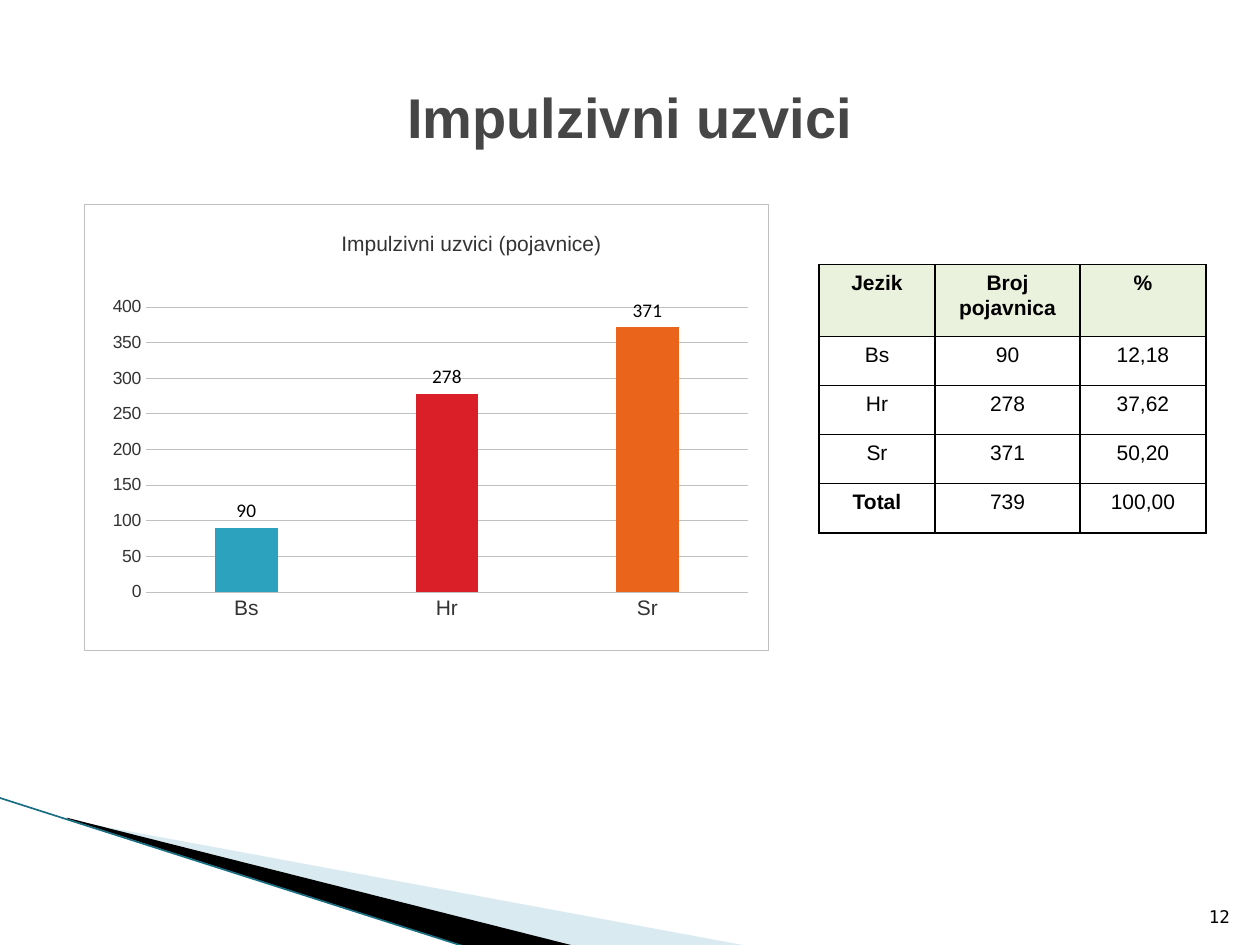
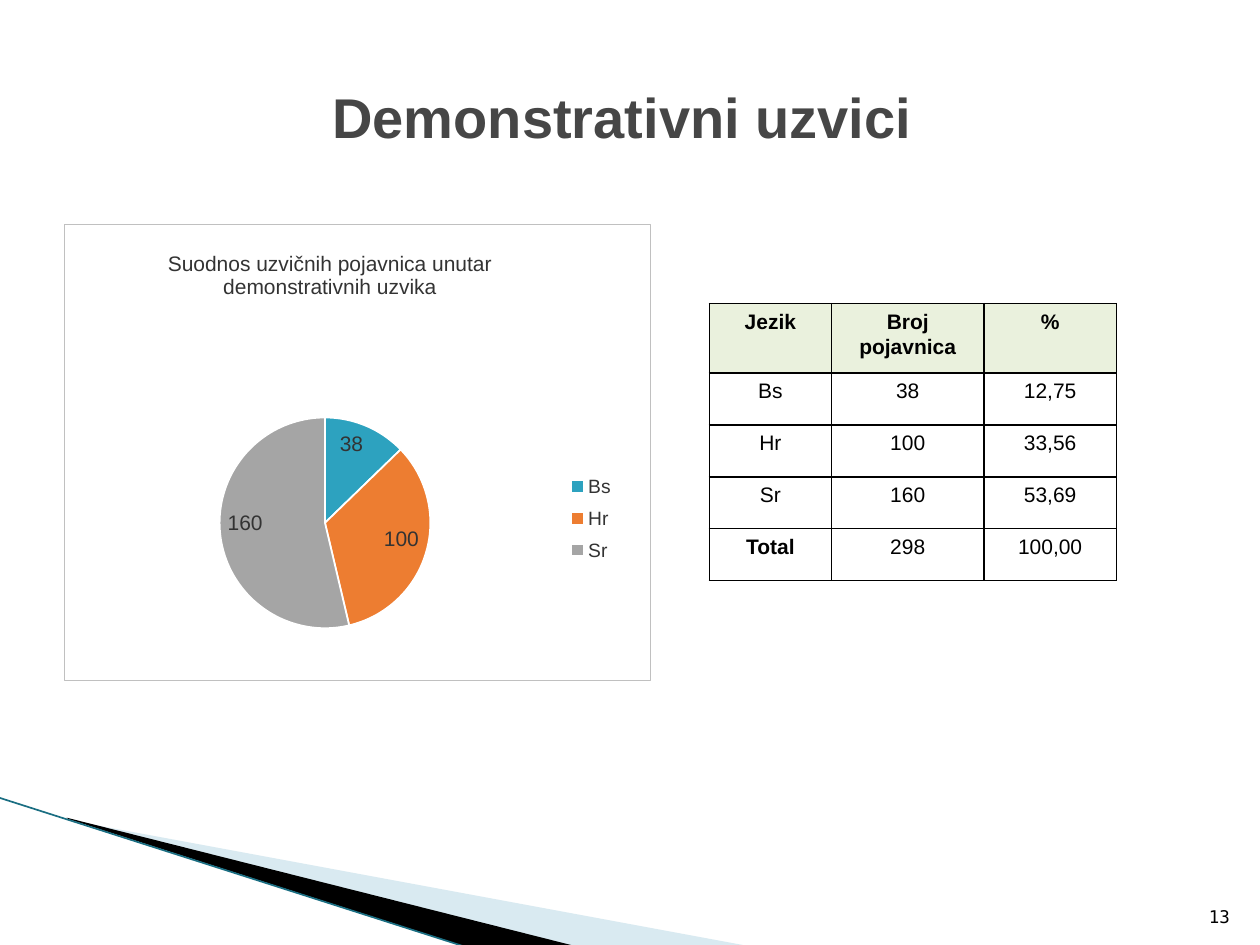
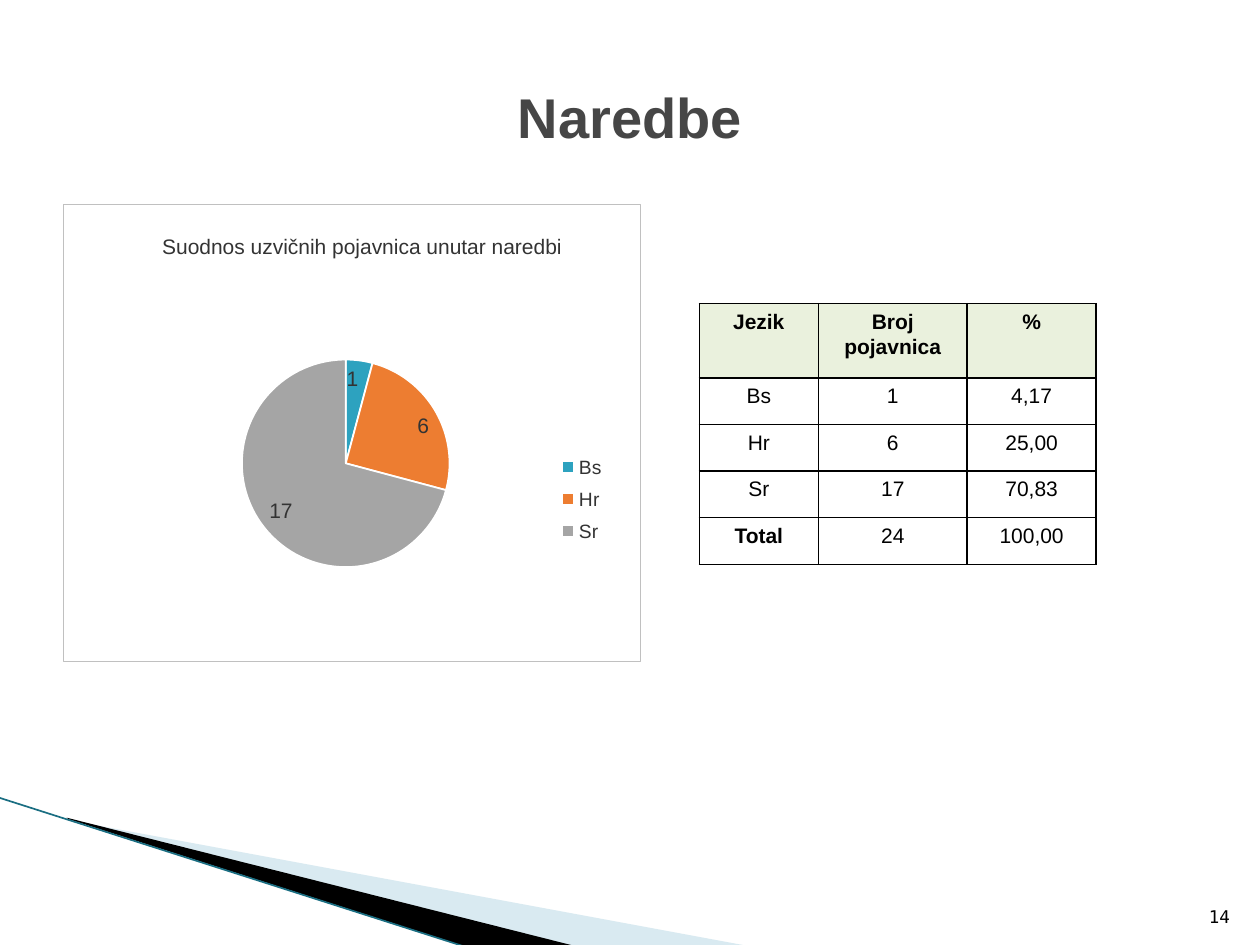
from dataclasses import dataclass
from typing import NamedTuple

from lxml.etree import SubElement
from pptx import Presentation
from pptx.chart.chart import Chart
from pptx.chart.data import CategoryChartData
from pptx.dml.color import RGBColor
from pptx.enum.chart import (
    XL_CHART_TYPE, XL_LABEL_POSITION, XL_LEGEND_POSITION, XL_TICK_MARK)
from pptx.enum.shapes import MSO_CONNECTOR
from pptx.enum.text import MSO_ANCHOR, PP_ALIGN
from pptx.oxml import parse_xml
from pptx.oxml.ns import nsdecls, qn
from pptx.util import Inches, Pt

COLORS = {
    "title": "464646", "text": "000000", "label": "333333", "rule": "C0C0C0",
    "paper": "FFFFFF", "head": "EAF1DD", "mist": "A0CBDC", "black": "000000",
    "edge": "1A6E82", "teal": "2DA2BF", "red": "DA1F28", "flame": "EB641B",
    "orange": "ED7D31", "gray": "A5A5A5",
}
FONT = "Arial"
LANGS = ("Bs", "Hr", "Sr")
HEADS = ("Jezik", "Broj pojavnica", "%")
SHARES = (0.3, 0.375, 0.325)
BAR_HUES = ("teal", "red", "flame")
PIE_HUES = ("teal", "orange", "gray")
FIRST_PAGE = 12


class Box(NamedTuple):
    x: float
    y: float
    w: float
    h: float

    def inches(self) -> tuple:
        return tuple(Inches(side) for side in self)


class Band(NamedTuple):
    points: tuple
    color: str
    alpha: int


@dataclass
class Topic:
    title: str
    caption: str
    counts: tuple
    is_pie: bool
    chart: Box
    plot: Box
    start: tuple
    table: Box
    head: float


BANDS = (
    Band(((0.55, 6.51), (5.95, 7.51), (4.56, 7.51), (0.55, 6.5)), "mist", 40),
    Band(((0.53, 6.49), (4.57, 7.51), (3.72, 7.52), (0.54, 6.5)), "black", 100),
)
LEGEND = Box(0.85, 0.53, 0.1, 0.23)
TOPICS = (
    Topic("Impulzivni uzvici", "Impulzivni uzvici (pojavnice)",
          (90, 278, 371), False,
          Box(0.67, 1.62, 5.43, 3.54), Box(0.09, 0.23, 0.88, 0.64),
          (0.37, 0.05), Box(6.5, 2.1, 3.07, 2.13), 0.57),
    Topic("Demonstrativni uzvici ",
          "Suodnos uzvičnih pojavnica unutar demonstrativnih uzvika",
          (38, 100, 160), True,
          Box(0.51, 1.78, 4.65, 3.62), Box(0.265, 0.405, 0.36, 0.5),
          (0.17, 0.05), Box(5.63, 2.41, 3.23, 2.2), 0.55),
    Topic("Naredbe", "Suodnos uzvičnih pojavnica unutar naredbi",
          (1, 6, 17), True,
          Box(0.5, 1.62, 4.58, 3.63), Box(0.31, 0.317, 0.36, 0.5),
          (0.165, 0.055), Box(5.55, 2.41, 3.15, 2.07), 0.59),
)


def color(name: str) -> RGBColor:
    return RGBColor.from_string(COLORS[name])


def set_font(font, size: float, hue: str, bold: bool = False,
             face: str = FONT) -> None:
    font.name, font.size, font.bold = face, Pt(size), bold
    font.color.rgb = color(hue)


def paint(item, hue: str) -> None:
    item.fill.solid()
    item.fill.fore_color.rgb = color(hue)


def set_line(line, hue: str, width: float) -> None:
    line.color.rgb = color(hue)
    line.width = Pt(width)


def draw_bands(slide) -> None:
    for band in BANDS:
        points = [(Inches(x), Inches(y)) for x, y in band.points]
        pen = slide.shapes.build_freeform(*points[0])
        pen.add_line_segments(points[1:], close=True)
        shape = pen.convert_to_shape()
        shape.shadow.inherit = False
        shape.line.fill.background()
        paint(shape, band.color)
        if band.alpha < 100:
            fill = shape.element.spPr.find(".//" + qn("a:srgbClr"))
            SubElement(fill, qn("a:alpha"), val=str(band.alpha * 1000))
    edge = slide.shapes.add_connector(
        MSO_CONNECTOR.STRAIGHT, Inches(-0.01), Inches(6.33),
        Inches(3.71), Inches(7.52))
    set_line(edge.line, "edge", 0.95)
    SubElement(edge.element.spPr, qn("a:effectLst"))


def draw_title(slide, text: str) -> None:
    title = slide.shapes.title
    title.left, title.top, title.width, title.height = Box(
        0.5, 0.3, 9, 1.25).inches()
    frame = title.text_frame
    frame.text = text
    frame.vertical_anchor = MSO_ANCHOR.MIDDLE
    frame.paragraphs[0].alignment = PP_ALIGN.CENTER
    set_font(frame.paragraphs[0].font, 32, "title", True)


def draw_page(slide, page: int) -> None:
    frame = slide.shapes.add_textbox(
        *Box(9.46, 7.01, 0.4, 0.4).inches()).text_frame
    frame.word_wrap = True
    frame.vertical_anchor = MSO_ANCHOR.BOTTOM
    frame.text = str(page)
    frame.paragraphs[0].alignment = PP_ALIGN.RIGHT
    set_font(frame.paragraphs[0].font, 10, "text", face="DejaVu Sans Mono")


def place(chart: Chart, tag: str, index: int, spot: tuple) -> None:
    """Fix a chart part at fractions of the chart: x, y and maybe w, h."""
    part = chart.element.find(".//" + qn(tag))
    for old in part.findall(qn("c:layout")):
        part.remove(old)
    target = '<c:layoutTarget val="inner"/>' if tag == "c:plotArea" else ""
    modes = '<c:xMode val="edge"/><c:yMode val="edge"/>'
    sides = "".join(f'<c:{key} val="{val}"/>' for key, val in zip("xywh", spot))
    part.insert(index, parse_xml(
        f'<c:layout {nsdecls("c")}><c:manualLayout>{target}{modes}{sides}'
        "</c:manualLayout></c:layout>"))


def frame_chart(chart: Chart) -> None:
    chart.element.find(qn("c:chart")).addnext(parse_xml(
        f'<c:spPr {nsdecls("c", "a")}>'
        f'<a:solidFill><a:srgbClr val="{COLORS["paper"]}"/></a:solidFill>'
        f'<a:ln w="{Pt(0.25)}"><a:solidFill><a:srgbClr val="{COLORS["rule"]}"/>'
        "</a:solidFill></a:ln></c:spPr>"))


def style_pie(chart: Chart) -> None:
    chart.has_legend = True
    legend = chart.legend
    legend.position = XL_LEGEND_POSITION.RIGHT
    legend.include_in_layout = False
    set_font(legend.font, 11, "label")
    place(chart, "c:legend", 1, LEGEND)


def style_bars(chart: Chart) -> None:
    plot = chart.plots[0]
    plot.gap_width, plot.overlap = 219, -27
    chart.has_legend = False
    cats, vals = chart.category_axis, chart.value_axis
    for axis, size in ((cats, 12), (vals, 10)):
        axis.major_tick_mark = axis.minor_tick_mark = XL_TICK_MARK.NONE
        set_font(axis.tick_labels.font, size, "label")
    set_line(cats.format.line, "rule", 0.25)
    vals.format.line.fill.background()
    vals.minimum_scale, vals.maximum_scale, vals.major_unit = 0, 400, 50
    set_line(vals.major_gridlines.format.line, "rule", 0.25)


def draw_chart(slide, topic: Topic) -> None:
    data = CategoryChartData()
    data.categories = LANGS
    data.add_series("Series 1", topic.counts)
    kind = XL_CHART_TYPE.PIE if topic.is_pie else XL_CHART_TYPE.COLUMN_CLUSTERED
    chart = slide.shapes.add_chart(kind, *topic.chart.inches(), data).chart
    set_font(chart.font, 11, "text", face="Calibri")
    frame_chart(chart)

    chart.has_title = True
    frame = chart.chart_title.text_frame
    frame.text = topic.caption
    set_font(frame.paragraphs[0].font, 12, "label")
    place(chart, "c:title", 1, topic.start)
    place(chart, "c:plotArea", 0, topic.plot)

    plot = chart.plots[0]
    plot.vary_by_categories = topic.is_pie
    plot.has_data_labels = True
    labels = plot.data_labels
    labels.show_value = True
    if topic.is_pie:
        style_pie(chart)
        labels.show_percentage = False
        labels.position = XL_LABEL_POSITION.INSIDE_END
        set_font(labels.font, 12, "label")
    else:
        style_bars(chart)
        labels.position = XL_LABEL_POSITION.OUTSIDE_END
        set_font(labels.font, 11, "text", face="Calibri")
    for i, hue in enumerate(PIE_HUES if topic.is_pie else BAR_HUES):
        look = plot.series[0].points[i].format
        paint(look, hue)
        if topic.is_pie:
            set_line(look.line, "paper", 1)


def add_borders(cell) -> None:
    props = cell._tc.get_or_add_tcPr()
    for i, side in enumerate("LRTB"):
        props.insert(i, parse_xml(
            f'<a:ln{side} {nsdecls("a")} w="{Pt(1)}"><a:solidFill>'
            f'<a:srgbClr val="{COLORS["black"]}"/></a:solidFill></a:ln{side}>'))


def fill_cell(cell, text: str, is_head: bool) -> None:
    cell.margin_left = cell.margin_right = Inches(0.04)
    cell.margin_top = cell.margin_bottom = Inches(0.04)
    cell.text = text
    para = cell.text_frame.paragraphs[0]
    para.alignment = PP_ALIGN.CENTER
    para.line_spacing = 1.07
    set_font(para.font, 12, "text", is_head or text == "Total")
    if is_head:
        paint(cell, "head")
    else:
        cell.fill.background()
    add_borders(cell)


def draw_table(slide, topic: Topic) -> None:
    total = sum(topic.counts)
    rows = [HEADS]
    for lang, count in zip((*LANGS, "Total"), (*topic.counts, total)):
        share = f"{100 * count / total:.2f}".replace(".", ",")
        rows.append((lang, str(count), share))
    box = topic.table
    table = slide.shapes.add_table(
        len(rows), len(HEADS), *box.inches()).table
    table.first_row = table.horz_banding = False
    for column, share in zip(table.columns, SHARES):
        column.width = Inches(box.w * share)
    for r, row in enumerate(rows):
        height = (box.h - topic.head) / (len(rows) - 1) if r else topic.head
        table.rows[r].height = Inches(height)
        for c, text in enumerate(row):
            fill_cell(table.cell(r, c), text, r == 0)


def main() -> None:
    deck = Presentation()
    deck.slide_width, deck.slide_height = Inches(10), Inches(7.5)
    for page, topic in enumerate(TOPICS, FIRST_PAGE):
        slide = deck.slides.add_slide(deck.slide_layouts[5])
        draw_bands(slide)
        draw_title(slide, topic.title)
        draw_chart(slide, topic)
        draw_table(slide, topic)
        draw_page(slide, page)
    deck.save("out.pptx")


if __name__ == "__main__":
    main()
